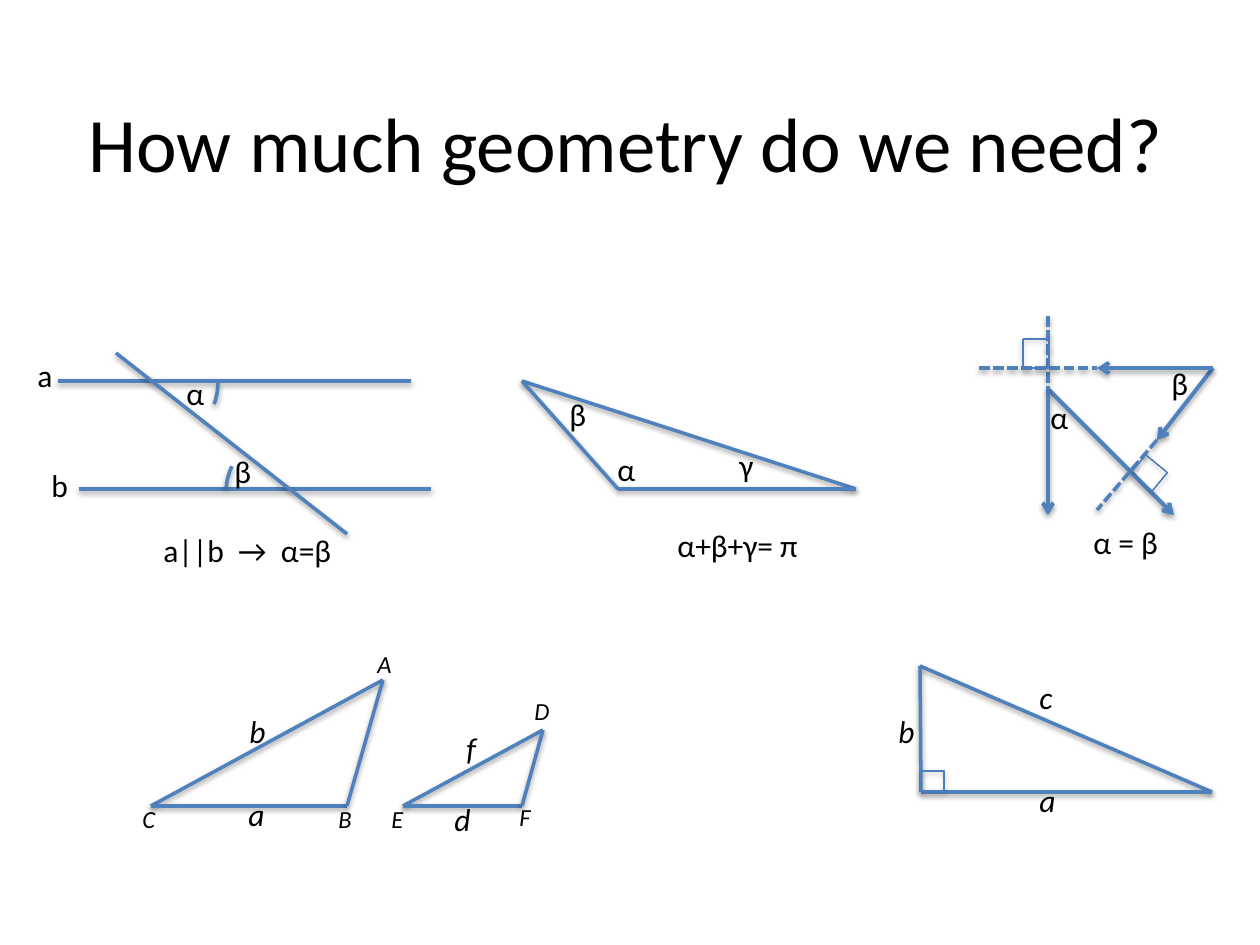
from lxml import etree
from pptx import Presentation
from pptx import util as u
from pptx.dml.color import RGBColor
from pptx.enum import dml, shapes, text
from pptx.oxml.ns import qn

PX = 914400 / 126
BLUE = RGBColor(0x4F, 0x81, 0xBD)
EDGE = RGBColor(0x4B, 0x7E, 0xBC)
DEEP = RGBColor(0x3F, 0x80, 0xCE)
PALE = RGBColor(0xA4, 0xC4, 0xFF)
BLACK = RGBColor(0, 0, 0)


def px(n):
    """Turn whole px into EMU."""
    return u.Emu(round(n * PX))


def add_shadow(sp, alpha=38, dist=20000):
    """Give a shape a soft shadow straight below it."""
    pr = sp._element.spPr
    for old in pr.findall(qn("a:effectLst")):
        pr.remove(old)
    effects = etree.SubElement(pr, qn("a:effectLst"))
    outer = etree.SubElement(effects, qn("a:outerShdw"), blurRad="40000",
                             dist=str(dist), dir="5400000", rotWithShape="0")
    color = etree.SubElement(outer, qn("a:srgbClr"), val="000000")
    etree.SubElement(color, qn("a:alpha"), val=str(alpha * 1000))


def add_text(s, at, content, box, size=18, italic=False, wrap=False, anchor=text.MSO_ANCHOR.TOP,
             align=text.PP_ALIGN.LEFT):
    """Place one line of text in a box measured from the point at."""
    x, y, w, h = box
    sp = s.shapes.add_textbox(px(at[0] + x), px(at[1] + y), px(w), px(h))
    tf = sp.text_frame
    tf.word_wrap = wrap
    tf.auto_size = text.MSO_AUTO_SIZE.NONE if wrap else text.MSO_AUTO_SIZE.SHAPE_TO_FIT_TEXT
    tf.vertical_anchor = anchor
    p = tf.paragraphs[0]
    p.alignment = align
    r = p.add_run()
    r.text = content
    r.font.name = "Calibri"
    r.font.size = u.Pt(size)
    r.font.italic = italic
    r.font.color.rgb = BLACK


def add_labels(s, at, labels, height=50, **fmt):
    """Place several labels given as text, left, top and width."""
    for content, x, y, w in labels:
        add_text(s, at, content, (x, y, w, height), **fmt)


def add_line(s, at, start, end, width=2, dashed=False, arrow=False):
    """Draw a straight line between two points measured from at."""
    sp = s.shapes.add_connector(shapes.MSO_CONNECTOR.STRAIGHT,
                                px(at[0] + start[0]), px(at[1] + start[1]),
                                px(at[0] + end[0]), px(at[1] + end[1]))
    sp.line.color.rgb = BLUE
    sp.line.width = u.Pt(width)
    if dashed:
        sp.line.dash_style = dml.MSO_LINE.SQUARE_DOT
    if arrow:
        etree.SubElement(sp.line._get_or_add_ln(), qn("a:tailEnd"), type="arrow")
    add_shadow(sp)


def add_triangle(s, at, corners):
    """Join three corners with lines."""
    for i, corner in enumerate(corners):
        add_line(s, at, corners[i - 1], corner)


def add_arc(s, at, x, y, rotation=0):
    """Draw an angle mark."""
    sp = s.shapes.add_shape(shapes.MSO_SHAPE.ARC, px(at[0] + x), px(at[1] + y), px(67), px(93))
    sp.adjustments[0] = 0.36
    sp.adjustments[1] = 21.78
    sp.rotation = rotation
    sp.fill.background()
    sp.line.color.rgb = BLUE
    sp.line.width = u.Pt(2)
    add_shadow(sp)


def add_right_angle(s, at, box, rotation=0, dashed=False):
    """Draw a square mark for a right angle."""
    x, y, w, h = box
    sp = s.shapes.add_shape(shapes.MSO_SHAPE.FRAME, px(at[0] + x), px(at[1] + y), px(w), px(h))
    sp.adjustments[0] = 0
    sp.rotation = rotation
    sp.fill.gradient()
    sp.fill.gradient_angle = 90
    for stop, color in zip(sp.fill.gradient_stops, (DEEP, PALE)):
        stop.color.rgb = color
    sp.line.color.rgb = EDGE
    sp.line.width = u.Pt(0.75)
    if dashed:
        sp.line.dash_style = dml.MSO_LINE.SQUARE_DOT
    add_shadow(sp, alpha=35, dist=23000)


def parallel_lines(s, at):
    """Show equal alternate angles between parallel lines."""
    gap = 108
    add_line(s, at, (33, 45), (386, 45))
    add_line(s, at, (54, 45 + gap), (406, 45 + gap))
    add_line(s, at, (91, 17), (322, 198))
    add_arc(s, at, 126, 0)
    add_arc(s, at, 201, gap, rotation=185)
    add_labels(s, at, [("α", 149, 32, 44), ("β", 197, 110, 43), ("a||b  →  α=β", 126, 189, 198),
                       ("a", 0, 14, 40), ("b", 14, 124, 42)])


def angle_sum(s, at):
    """Show the angle sum of a triangle."""
    add_triangle(s, at, [(0, 0), (96, 108), (334, 108)])
    add_labels(s, at, [("α", 83, 63, 44), ("β", 35, 8, 43), ("γ", 205, 59, 39),
                       ("α+β+γ= π", 143, 139, 147)])


def perpendicular_arms(s, at):
    """Show equal angles whose arms are perpendicular."""
    alpha, beta, left, lower = (69, 73), (234, 52), (118, 52), (178, 124)
    for start, end in [(alpha, (195, 199)), (alpha, (69, 199)), (beta, lower), (beta, left)]:
        add_line(s, at, start, end, width=2.25, arrow=True)
    for start, end in [((69, 0), alpha), ((0, 52), left), (lower, (118, 194))]:
        add_line(s, at, start, end, dashed=True)
    add_labels(s, at, [("α", 59, 76, 44), ("β", 180, 42, 43), ("α = β", 102, 201, 91)])
    add_right_angle(s, at, (44, 23, 26, 29), dashed=True)
    add_right_angle(s, at, (156, 145, 28, 24), rotation=39.5, dashed=True)


def similar_triangles(s, at):
    """Show two similar triangles with named corners and sides."""
    add_triangle(s, at, [(21, 163), (217, 163), (253, 37)])
    add_triangle(s, at, [(273, 163), (392, 163), (413, 87)])
    add_labels(s, at, [("A", 235, 0, 45), ("B", 196, 155, 45), ("C", 0, 155, 44),
                       ("D", 392, 47, 47), ("E", 249, 155, 44), ("F", 377, 153, 43)],
               height=43, size=14, italic=True)
    add_labels(s, at, [("a", 106, 146, 49), ("b", 107, 63, 49),
                       ("d", 312, 151, 49), ("f", 324, 80, 44)], italic=True)


def right_triangle(s, at):
    """Show a right triangle with named sides."""
    add_triangle(s, at, [(34, 0), (35, 126), (326, 126)])
    add_labels(s, at, [("b", 0, 40, 49), ("a", 141, 109, 49), ("c", 141, 6, 47)], italic=True)
    add_right_angle(s, at, (35, 105, 23, 20))


def main():
    """Build the slide and save it."""
    prs = Presentation()
    prs.slide_width, prs.slide_height = px(1260), px(945)
    s = prs.slides.add_slide(prs.slide_layouts[6])
    add_text(s, (18, 50), "How much geometry do we need?", (0, 0, 1216, 183), size=44, wrap=True,
             anchor=text.MSO_ANCHOR.MIDDLE, align=text.PP_ALIGN.CENTER)
    parallel_lines(s, (25, 336))
    angle_sum(s, (522, 381))
    perpendicular_arms(s, (979, 316))
    similar_triangles(s, (130, 643))
    right_triangle(s, (886, 666))
    prs.save("out.pptx")


if __name__ == "__main__":
    main()
